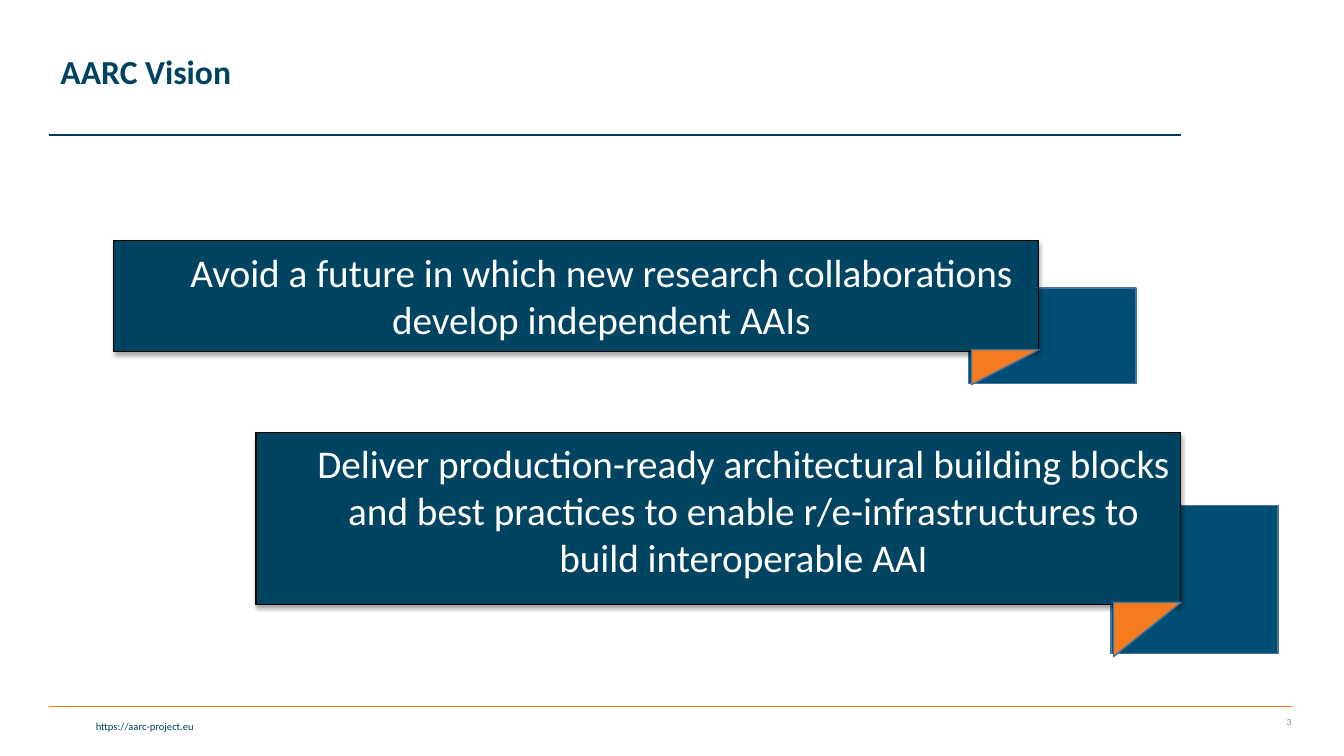
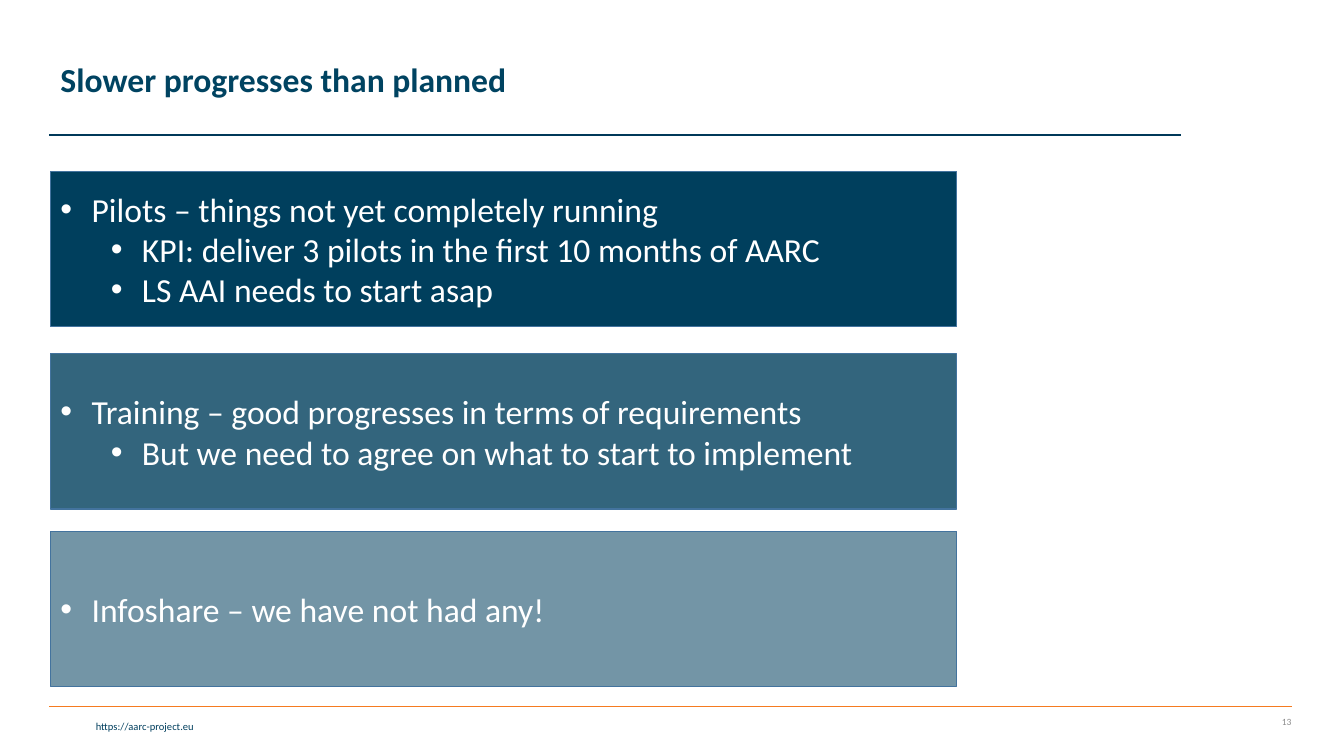
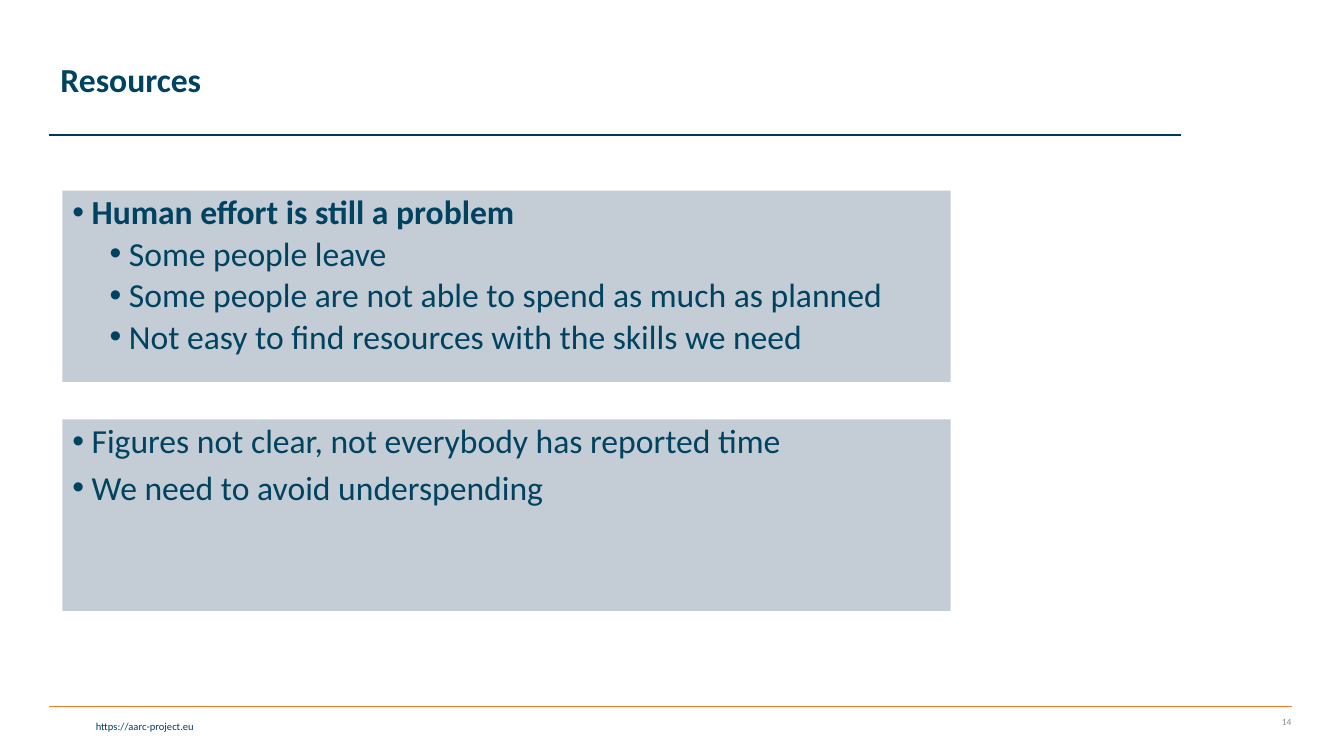
from dataclasses import dataclass

from lxml import etree
from pptx import Presentation
from pptx.dml.color import RGBColor as RGB
from pptx.enum.shapes import MSO_CONNECTOR as CONNECTOR, MSO_SHAPE as SHAPE
from pptx.enum.text import MSO_ANCHOR as ANCHOR, MSO_AUTO_SIZE as AUTO_SIZE, PP_ALIGN as ALIGN
from pptx.oxml.ns import qn
from pptx.util import Inches, Pt


@dataclass(frozen=True)
class Theme:
    font: str = "Calibri"
    title: str = "004361"
    rule: str = "003959"
    footer: str = "003F5E"
    number: str = "8C8C8C"
    orange: str = "F57B20"
    banner: str = "004461"
    banner_edge: str = "000000"
    block: str = "004E75"
    outline: str = "43739E"
    topic: str = "003F5D"
    panel: str = "1C4161"
    white: str = "FFFFFF"
    banner_size: float = 28
    text_size: float = 24
    footer_size: float = 7.5
    number_size: float = 6.8


theme = Theme()
presentation = Presentation()
presentation.slide_width = Inches(13.33)
presentation.slide_height = Inches(7.5)


def box(left, top, width, height):
    """Turn percentages of the slide's width and height into lengths."""
    across, down = presentation.slide_width / 100, presentation.slide_height / 100
    return [round(share * unit) for share, unit in
            zip((left, top, width, height), (across, down, across, down))]


def write(shape, lines, size, color, align=ALIGN.LEFT, anchor=ANCHOR.TOP, bold=False,
          indents=None, hanging=0, line_spacing=None, gaps=(0, 0)):
    """Fill a shape with (level, text) lines; hanging, in inches, adds bullets."""
    frame = shape.text_frame
    frame.word_wrap = True
    frame.auto_size = AUTO_SIZE.NONE
    frame.vertical_anchor = anchor
    for index, (level, text) in enumerate(lines):
        paragraph = frame.add_paragraph() if index else frame.paragraphs[0]
        paragraph.text = text
        paragraph.level = level
        paragraph.alignment = align
        paragraph.line_spacing = line_spacing
        paragraph.space_before = Pt(gaps[level] if index else 0)
        properties = paragraph._p.get_or_add_pPr()
        if indents:
            properties.set("marL", str(Inches(indents[level])))
            properties.set("indent", str(-Inches(hanging)))
        if hanging:
            etree.SubElement(properties, qn("a:buFont"), typeface="Arial")
            etree.SubElement(properties, qn("a:buChar"), char="•")
        paragraph.font.name = theme.font
        paragraph.font.size = Pt(size)
        paragraph.font.bold = bold
        paragraph.font.color.rgb = RGB.from_string(color)


# Shared frame: title, rules, address and slide number
titles = [
    ("AARC Vision", "3", 1.6, 16.27),
    ("Slower progresses than planned", "13", 1.07, 19.33),
    ("Resources", "14", 1.07, 19.33),
]
rules = [(theme.orange, 93.47, 92.47), (theme.rule, 17.87, 84.22)]
slides = []
for title, number, top, height in titles:
    slide = presentation.slides.add_slide(presentation.slide_layouts[5])
    slides.append(slide)
    for color, rule_top, rule_width in rules:
        left, y, width, _ = box(3.68, rule_top, rule_width, 0)
        rule = slide.shapes.add_connector(CONNECTOR.STRAIGHT, left, y, left + width, y)
        rule.line.color.rgb = RGB.from_string(color)
        rule.line.width = Pt(1)
        etree.SubElement(rule._element.spPr, qn("a:effectLst"))
    heading = slide.shapes.title
    heading.left, heading.top, heading.width, heading.height = box(3.75, top, 78.83, height)
    write(heading, [(0, title)], theme.text_size, theme.title, anchor=ANCHOR.MIDDLE,
          bold=True, line_spacing=0.9)
    address = slide.shapes.add_textbox(*box(0.23, 94.53, 14.93, 3.07))
    write(address, [(0, "https://aarc-project.eu")], theme.footer_size, theme.footer, ALIGN.RIGHT)
    page = slide.shapes.add_textbox(*box(90.75, 93.47, 6.08, 4))
    write(page, [(0, number)], theme.number_size, theme.number, ALIGN.RIGHT, ANCHOR.MIDDLE)

vision, progress, resources = slides

# Vision: banners folded over a block
banners = [
    (8.48, 31.87, 14.67,
     "Avoid a future in which new research collaborations develop independent AAIs"),
    (19.05, 57.2, 22.75,
     "Deliver production-ready architectural building blocks and best practices "
     "to enable r/e-infrastructures to build interoperable AAI"),
]
for left, top, height, text in banners:
    group = vision.shapes.add_group_shape()
    block = group.shapes.add_shape(
        SHAPE.RECTANGLE, *box(left + 63.6, top + 0.425 * height, 12.45, 0.86 * height))
    banner = group.shapes.add_shape(SHAPE.RECTANGLE, *box(left, top, 68.78, height))
    # The fold is a quarter turn, so its width and height swap about its centre
    x, y, width, depth = box(left + 63.8, top + height - 0.27, 5.03, 0.315 * height)
    fold = group.shapes.add_shape(SHAPE.RIGHT_TRIANGLE, x + (width - depth) // 2,
                                  y + (depth - width) // 2, depth, width)
    fold.rotation = 90
    for shape, fill, edge, weight in [(block, theme.block, theme.outline, 1),
                                      (banner, theme.banner, theme.banner_edge, 0.75),
                                      (fold, theme.orange, theme.outline, 1)]:
        shape.shadow.inherit = False
        shape.fill.solid()
        shape.fill.fore_color.rgb = RGB.from_string(fill)
        shape.line.color.rgb = RGB.from_string(edge)
        shape.line.width = Pt(weight)
    effects = banner._element.spPr.find(qn("a:effectLst"))
    shadow = etree.SubElement(effects, qn("a:outerShdw"), blurRad=str(Pt(3.1)),
                              dist=str(Pt(1.8)), dir="5400000", rotWithShape="0")
    shadow_color = etree.SubElement(shadow, qn("a:srgbClr"), val=theme.banner_edge)
    etree.SubElement(shadow_color, qn("a:alpha"), val="35000")
    frame = banner.text_frame
    frame.margin_left = frame.margin_right = frame.margin_top = frame.margin_bottom = Inches(0.07)
    write(banner, [(0, text)], theme.banner_size, theme.white, ALIGN.CENTER, indents=[0.5])

# Progress topics and resource panels: tinted boxes of bullets
topic_style = dict(size=theme.text_size, color=theme.white, anchor=ANCHOR.MIDDLE,
                   indents=(0.31, 0.81), hanging=0.31)
panel_style = dict(size=theme.text_size, color=theme.title, indents=(0.19, 0.56),
                   hanging=0.19, line_spacing=0.9, gaps=(7.5, 3.8))
topic_column, panel_column = (3.75, 67.43, 20.53), (4.65, 66.08, 25.33)
boxes = [
    (progress, topic_column, 22.67, theme.topic, 100, theme.outline, topic_style, [
        (0, "Pilots – things not yet completely running"),
        (1, "KPI: deliver 3 pilots in the first 10 months of AARC"),
        (1, "LS AAI needs to start asap")]),
    (progress, topic_column, 46.8, theme.topic, 80, theme.outline, topic_style, [
        (0, "Training – good progresses in terms of requirements"),
        (1, "But we need to agree on what to start to implement")]),
    (progress, topic_column, 70.27, theme.topic, 55, theme.outline, topic_style, [
        (0, "Infoshare – we have not had any!")]),
    (resources, panel_column, 25.2, theme.panel, 26, None, panel_style, [
        (0, "Human effort is still a problem"),
        (1, "Some people leave"),
        (1, "Some people are not able to spend as much as planned"),
        (1, "Not easy to find resources with the skills we need")]),
    (resources, panel_column, 55.47, theme.panel, 26, None, panel_style, [
        (0, "Figures not clear, not everybody has reported time"),
        (0, "We need to avoid underspending")]),
]
for slide, (left, width, height), top, fill, opacity, edge, style, lines in boxes:
    shape = slide.shapes.add_shape(SHAPE.RECTANGLE, *box(left, top, width, height))
    shape.shadow.inherit = False
    shape.fill.solid()
    shape.fill.fore_color.rgb = RGB.from_string(fill)
    tint = shape._element.spPr.find(qn("a:solidFill")).find(qn("a:srgbClr"))
    etree.SubElement(tint, qn("a:alpha"), val=str(opacity * 1000))
    if edge:
        shape.line.color.rgb = RGB.from_string(edge)
        shape.line.width = Pt(1)
    else:
        shape.line.fill.background()
    write(shape, lines, **style)
    if lines[0][1].startswith("Human effort"):
        shape.text_frame.paragraphs[0].font.bold = True

presentation.save("out.pptx")
